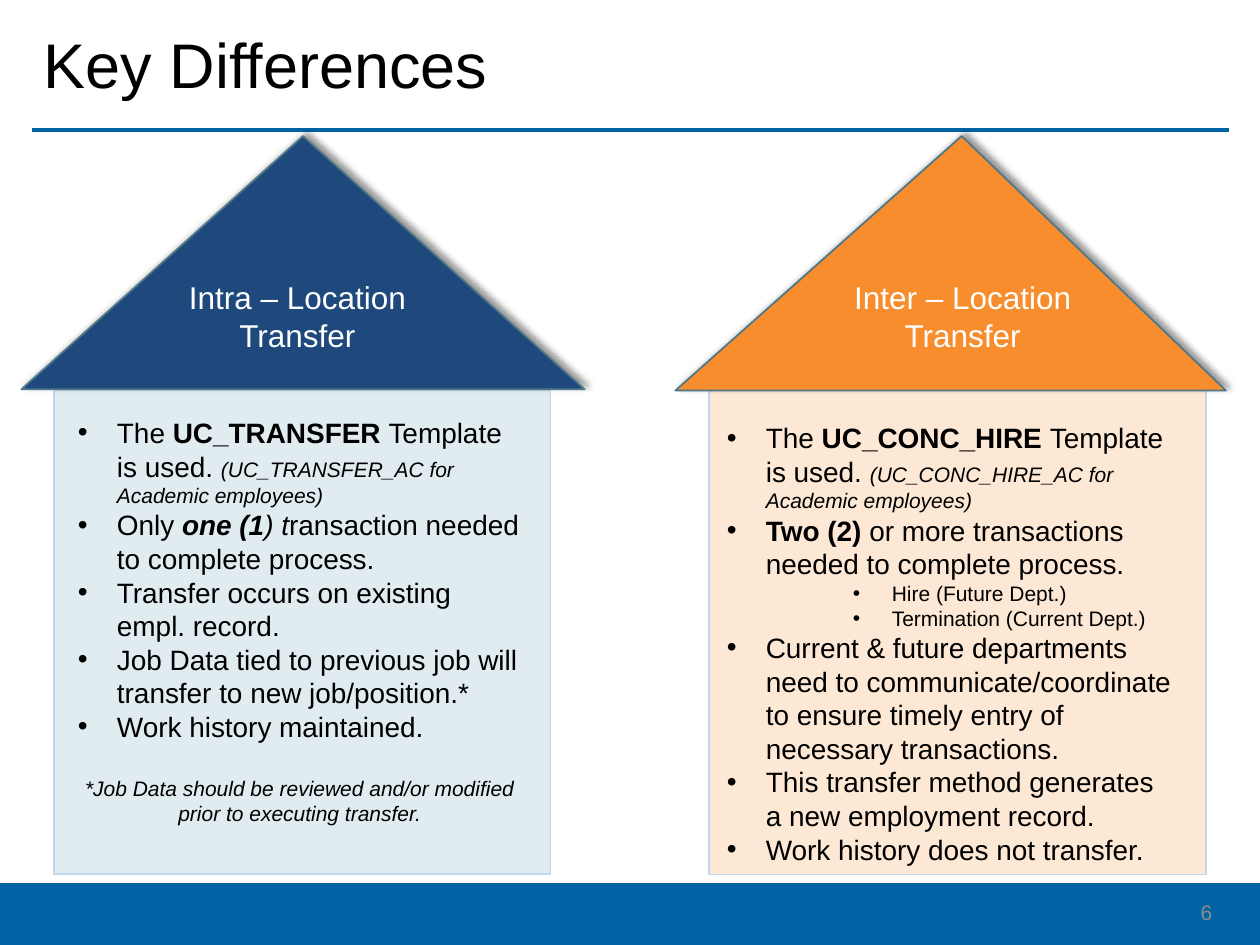
import pptx
import pptx.dml.color
import pptx.enum.shapes
import pptx.enum.text
import pptx.oxml
import pptx.oxml.ns
import pptx.util

RGBColor = pptx.dml.color.RGBColor
Shapes = pptx.enum.shapes.MSO_SHAPE
Align = pptx.enum.text.PP_ALIGN
Anchor = pptx.enum.text.MSO_ANCHOR

BLACK = RGBColor(0x00, 0x00, 0x00)
WHITE = RGBColor(0xFF, 0xFF, 0xFF)
GRAY = RGBColor(0x8C, 0x8C, 0x8C)
BRAND_BLUE = RGBColor(0x00, 0x64, 0xA4)
NAVY = RGBColor(0x1F, 0x49, 0x7D)
ORANGE = RGBColor(0xF7, 0x8D, 0x2D)
PALE_BLUE = RGBColor(0xE1, 0xEC, 0xF1)
PALE_ORANGE = RGBColor(0xFD, 0xE8, 0xD5)
WALL_EDGE = RGBColor(0xC3, 0xD6, 0xF0)
ROOF_EDGE = RGBColor(0x4E, 0x78, 0x88)

PX = 9144
BODY = {"size": pptx.util.Pt(16)}
BOLD = {**BODY, "bold": True}
ITALIC = {**BODY, "italic": True}
BOLD_ITALIC = {**BOLD, "italic": True}
SMALL = {"size": pptx.util.Pt(12)}
SMALL_ITALIC = {**SMALL, "italic": True}
LABEL = {"size": pptx.util.Pt(18)}
TITLE = {"size": pptx.util.Pt(36)}
CENTER = {"alignment": Align.CENTER}
NOTE = {**CENTER, "space_before": pptx.util.Pt(18.4)}


class SlideBuilder:
    """Draws styled elements on the current slide."""

    def __init__(self, slide, font="Arial"):
        self.slide = slide
        self.font = font

    def lengths(self, box):
        return [value * PX for value in box]

    def element(self, parent, tag, **attributes):
        child = pptx.oxml.parse_xml(f"<a:{tag} {pptx.oxml.ns.nsdecls('a')}/>")
        for name, value in attributes.items():
            child.set(name, str(value))
        parent.append(child)
        return child

    def line(self, start, end, color, width):
        connector = self.slide.shapes.add_connector(
            pptx.enum.shapes.MSO_CONNECTOR.STRAIGHT, *self.lengths(start + end))
        connector.line.color.rgb = color
        connector.line.width = pptx.util.Pt(width)
        self.element(connector._element.spPr, "effectLst")

    def shape(self, kind, box, fill, edge=None):
        shape = self.slide.shapes.add_shape(kind, *self.lengths(box))
        shape.fill.solid()
        shape.fill.fore_color.rgb = fill
        if edge is None:
            shape.line.fill.background()
        else:
            shape.line.color.rgb = edge
            shape.line.width = pptx.util.Pt(1)
        shape.shadow.inherit = False
        return shape

    def roof(self, box, fill, peak):
        shape = self.shape(Shapes.ISOSCELES_TRIANGLE, box, fill, ROOF_EDGE)
        shape.adjustments[0] = peak
        effects = shape._element.spPr.find(pptx.oxml.ns.qn("a:effectLst"))
        shadow = self.element(
            effects, "outerShdw", blurRad=pptx.util.Pt(4), dist=pptx.util.Pt(3),
            dir=315 * 60000, algn="bl", rotWithShape=0)
        color = self.element(shadow, "srgbClr", val="000000")
        self.element(color, "alpha", val=40000)

    def bullet(self, paragraph, level):
        properties = paragraph._p.get_or_add_pPr()
        paragraph.level = level
        properties.set("marL", str((131 if level else 31) * PX))
        properties.set("indent", str(-31 * PX))
        self.element(properties, "buFont", typeface=self.font)
        self.element(properties, "buChar", char="•")

    def text(self, box, paragraphs, color=BLACK, wrap=True, anchor=Anchor.TOP):
        frame = self.slide.shapes.add_textbox(*self.lengths(box)).text_frame
        frame.word_wrap = wrap
        frame.vertical_anchor = anchor
        for index, (layout, runs) in enumerate(paragraphs):
            paragraph = frame.paragraphs[0] if index == 0 else frame.add_paragraph()
            if isinstance(layout, int):
                self.bullet(paragraph, layout)
            else:
                for name, value in layout.items():
                    setattr(paragraph, name, value)
            for content, style in runs:
                run = paragraph.add_run()
                run.text = content
                run.font.color.rgb = color
                for name, value in {"name": self.font, **style}.items():
                    setattr(run.font, name, value)

    def house(self, wall, wall_fill, roof, roof_fill, peak, label_box, label, body_box, body):
        self.shape(Shapes.RECTANGLE, wall, wall_fill, WALL_EDGE)
        self.roof(roof, roof_fill, peak)
        self.text(label_box, [(CENTER, [(line, LABEL)]) for line in label], WHITE, wrap=False)
        self.text(body_box, body)


INTRA_POINTS = [
    (0, [("The", BODY), (" UC_TRANSFER ", BOLD), ("Template is used. ", BODY),
         ("(UC_TRANSFER_AC for Academic employees)", SMALL_ITALIC)]),
    (0, [("Only ", BODY), ("one (1", BOLD_ITALIC), (") t", ITALIC),
         ("ransaction needed to complete process.", BODY)]),
    (0, [("Transfer occurs on existing empl. record.", BODY)]),
    (0, [("Job Data tied to previous job will transfer to new job/position.*", BODY)]),
    (0, [("Work history maintained.", BODY)]),
    (NOTE, [("*Job Data should be reviewed and/or modified prior to executing transfer.",
             SMALL_ITALIC)]),
]
INTER_POINTS = [
    (0, [("The ", BODY), ("UC_CONC_HIRE ", BOLD), ("Template is used. ", BODY),
         ("(UC_CONC_HIRE_AC for Academic employees)", SMALL_ITALIC)]),
    (0, [("Two (2) ", BOLD), ("or more transactions needed to complete process.", BODY)]),
    (2, [("Hire (Future Dept.)", SMALL)]),
    (2, [("Termination (Current Dept.)", SMALL)]),
    (0, [("Current & future departments need to communicate/coordinate "
          "to ensure timely entry of necessary transactions.", BODY)]),
    (0, [("This transfer method generates a new employment record.", BODY)]),
    (0, [("Work history does not transfer.", BODY)]),
]


def main():
    presentation = pptx.Presentation()
    presentation.slide_width = 1000 * PX
    presentation.slide_height = 750 * PX
    builder = SlideBuilder(presentation.slides.add_slide(presentation.slide_layouts[6]))

    builder.line((25, 103), (975, 103), BRAND_BLUE, 2.25)
    builder.shape(Shapes.RECTANGLE, (0, 701, 1000, 49), BRAND_BLUE)
    builder.text((25, 5, 950, 98), [({"line_spacing": 0.9}, [("Key Differences", TITLE)])],
                 anchor=Anchor.MIDDLE)
    builder.text((747, 704, 225, 40), [({"alignment": Align.RIGHT}, [("6", SMALL)])],
                 GRAY, anchor=Anchor.MIDDLE)

    builder.house((43, 310, 394, 384), PALE_BLUE, (17, 108, 447, 201), NAVY, 0.5,
                  (140, 216, 192, 71), ["Intra – Location", "Transfer"],
                  (52, 325, 372, 340), INTRA_POINTS)
    builder.house((563, 309, 394, 385), PALE_ORANGE, (536, 108, 437, 202), ORANGE, 0.52,
                  (668, 216, 192, 71), ["Inter – Location", "Transfer"],
                  (567, 329, 374, 394), INTER_POINTS)

    presentation.save("out.pptx")


if __name__ == "__main__":
    main()
